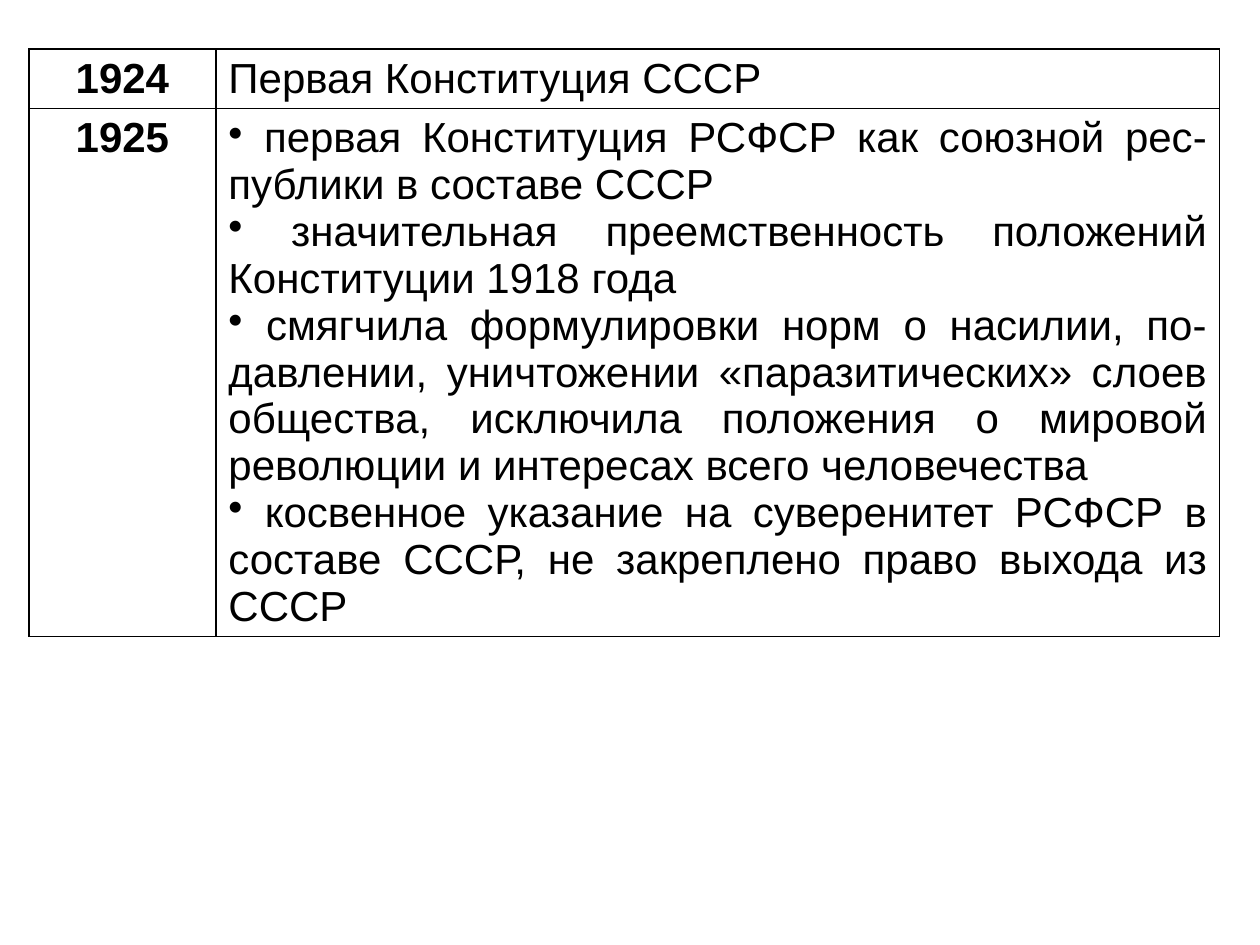
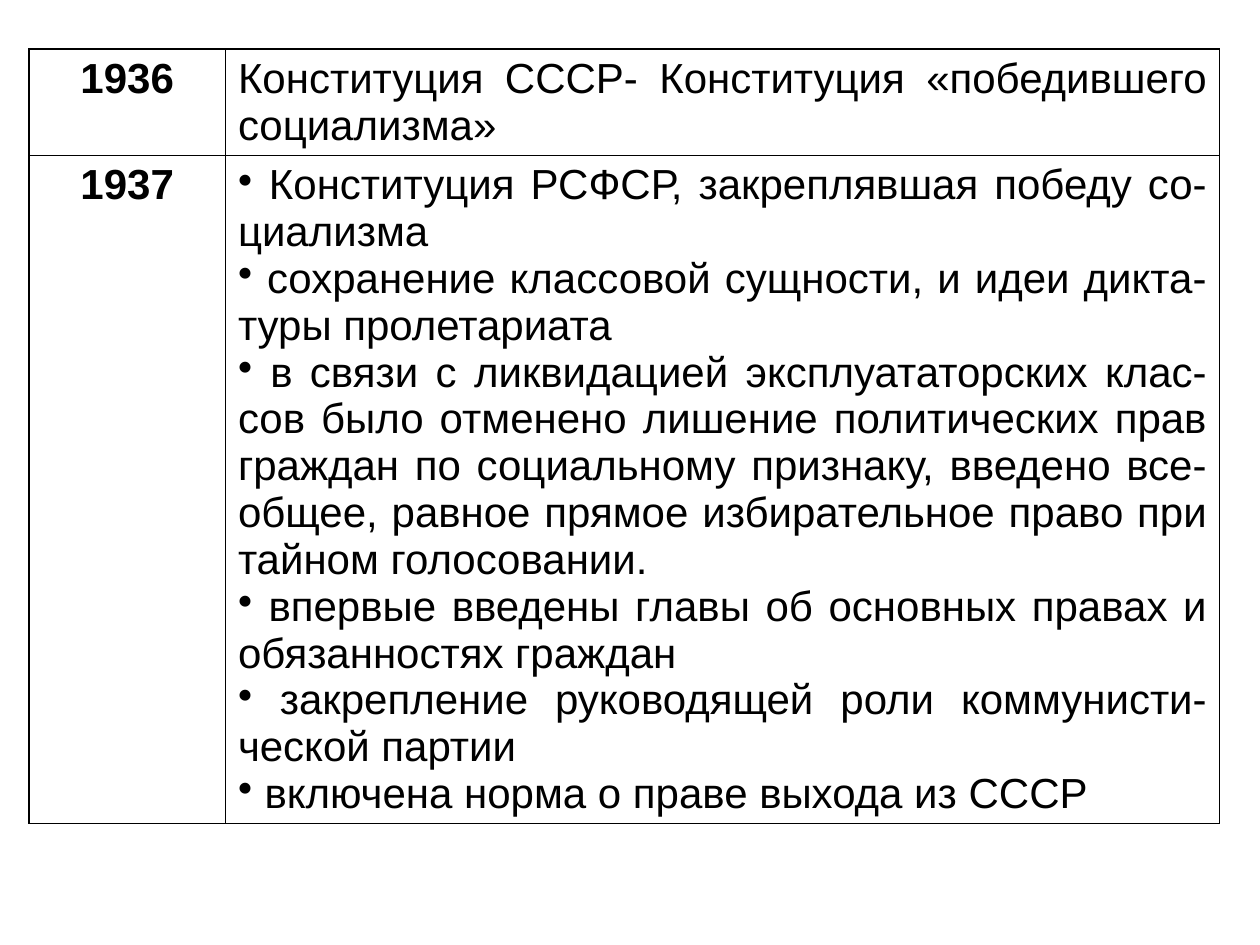
from dataclasses import dataclass

from lxml.etree import SubElement
from pptx import Presentation
from pptx.dml.color import RGBColor
from pptx.enum.text import MSO_ANCHOR as Anchor, PP_ALIGN as Align
from pptx.oxml.ns import qn
from pptx.util import Inches, Pt


@dataclass(frozen=True)
class Theme:
    ink: str = "000000"
    font: str = "Arial"
    size: int = 24
    border: float = 1
    line_height: float = 0.37
    row_padding: float = 0.1


@dataclass(frozen=True)
class Box:
    left: float
    top: float
    width: float


THEME = Theme()
TABLE_BOX = Box(0.23, 0.39, 9.45)
BLANK_LAYOUT = 6


def style_paragraph(para, align, bold=False, bullet=False):
    para.alignment = align
    if bullet:
        SubElement(para._p.get_or_add_pPr(), qn("a:buChar")).set("char", "•")
    para.font.name = THEME.font
    para.font.size = Pt(THEME.size)
    para.font.bold = bold
    para.font.color.rgb = RGBColor.from_string(THEME.ink)


def style_cell(cell):
    """Draw the four borders and leave the cell unfilled."""
    properties = cell._tc.get_or_add_tcPr()
    for side in ("lnL", "lnR", "lnT", "lnB"):
        line = SubElement(properties, qn(f"a:{side}"), w=str(Pt(THEME.border)))
        fill = SubElement(line, qn("a:solidFill"))
        SubElement(fill, qn("a:srgbClr"), val=THEME.ink)
    cell.fill.background()


def fill_year(cell, year):
    cell.text = year
    style_paragraph(cell.text_frame.paragraphs[0], Align.CENTER, bold=True)


def fill_summary(cell, summary):
    cell.text = summary
    cell.vertical_anchor = Anchor.MIDDLE
    style_paragraph(cell.text_frame.paragraphs[0], Align.JUSTIFY)


def fill_points(cell, points):
    cell.text = "\n".join(f" {point}" for point in points)
    for para in cell.text_frame.paragraphs:
        style_paragraph(para, Align.JUSTIFY, bullet=True)


def add_constitution_table(page, box, year_share, line_counts, union, republic):
    """Two rows: the union constitution, then the points of the republic's one."""
    heights = [count * THEME.line_height + THEME.row_padding for count in line_counts]
    table = page.shapes.add_table(
        2, 2, Inches(box.left), Inches(box.top), Inches(box.width), Inches(sum(heights))
    ).table
    table.first_row = table.horz_banding = False
    for column, share in zip(table.columns, (year_share, 1 - year_share)):
        column.width = Inches(box.width * share)
    for row, height in zip(table.rows, heights):
        row.height = Inches(height)
    for cell in table.iter_cells():
        style_cell(cell)

    for row, (year, _) in enumerate((union, republic)):
        fill_year(table.cell(row, 0), year)
    fill_summary(table.cell(0, 1), union[1])
    fill_points(table.cell(1, 1), republic[1])


PAGES = [
    dict(
        year_share=0.157,
        line_counts=(1, 11),
        union=("1924", "Первая Конституция СССР"),
        republic=("1925", [
            "первая Конституция РСФСР как союзной рес-публики в составе СССР",
            "значительная преемственность положений Конституции 1918 года",
            "смягчила формулировки норм о насилии, по-давлении, уничтожении "
            "«паразитических» слоев общества, исключила положения о мировой "
            "революции и интересах всего человечества",
            "косвенное указание на суверенитет РСФСР в составе СССР, "
            "не закреплено право выхода из СССР",
        ]),
    ),
    dict(
        year_share=0.165,
        line_counts=(2, 14),
        union=("1936", "Конституция СССР- Конституция «победившего социализма»"),
        republic=("1937", [
            "Конституция РСФСР, закреплявшая победу со-циализма",
            "сохранение классовой сущности, и идеи дикта-туры пролетариата",
            "в связи с ликвидацией эксплуататорских клас-сов было отменено лишение "
            "политических прав граждан по социальному признаку, введено все-общее, "
            "равное прямое избирательное право при тайном голосовании.",
            "впервые введены главы об основных правах и обязанностях граждан",
            "закрепление руководящей роли коммунисти-ческой партии",
            "включена норма о праве выхода из СССР",
        ]),
    ),
]


def main():
    deck = Presentation()
    deck.slide_width, deck.slide_height = Inches(10), Inches(7.5)
    for content in PAGES:
        page = deck.slides.add_slide(deck.slide_layouts[BLANK_LAYOUT])
        add_constitution_table(page, TABLE_BOX, **content)
    deck.save("out.pptx")


if __name__ == "__main__":
    main()
